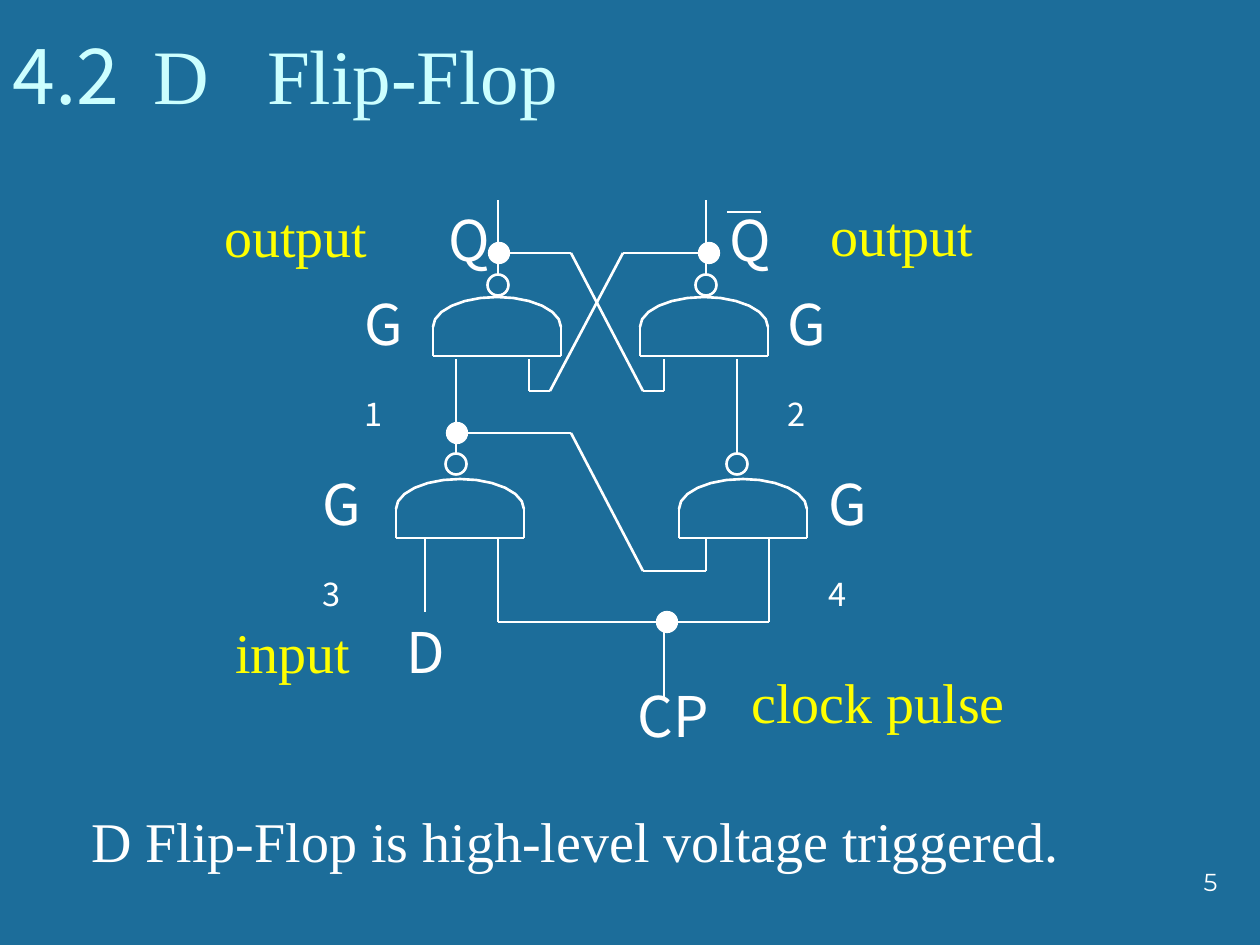
from dataclasses import dataclass
from math import cos, pi, sin

from lxml.etree import SubElement
from pptx import Presentation
from pptx.dml.color import RGBColor
from pptx.enum.shapes import MSO_CONNECTOR, MSO_SHAPE
from pptx.enum.text import MSO_ANCHOR, PP_ALIGN
from pptx.oxml.ns import qn
from pptx.util import Emu, Pt

EMU_PER_PX = 914400 / 126


@dataclass(frozen=True)
class Theme:
    background: RGBColor = RGBColor(0x1C, 0x6D, 0x9A)
    ink: RGBColor = RGBColor(0xFF, 0xFF, 0xFF)
    heading: RGBColor = RGBColor(0xCC, 0xFF, 0xFF)
    accent: RGBColor = RGBColor(0xFF, 0xFF, 0x00)
    sans: str = "Noto Sans CJK SC"
    serif: str = "Times New Roman"
    number_font: str = "Montserrat"
    heading_size: int = 44
    body_size: int = 32
    number_size: int = 14
    wire_width: float = 1.5
    dot_width: float = 0.75


THEME = Theme()
GATE_WIDTH, GATE_SHOULDER, GATE_HEIGHT = 128, 30, 59
NODE_SIZE = 21

GATES = [(640, 297), (433, 297), (679, 479), (396, 479)]
BUBBLES = [(498, 285), (706, 285), (456, 464), (737, 464)]
JUNCTIONS = [(457, 433), (499, 253), (709, 253), (667, 622)]
WIRES = [
    [(498, 275), (498, 200)],
    [(706, 275), (706, 200)],
    [(498, 253), (571, 253), (643, 391), (664, 391), (664, 359)],
    [(706, 253), (623, 253), (550, 391), (529, 391), (529, 359)],
    [(456, 359), (456, 391)],
    [(456, 454), (456, 380)],
    [(737, 359), (737, 391)],
    [(737, 454), (737, 380)],
    [(456, 433), (571, 433), (643, 571), (706, 571), (706, 538)],
    [(498, 538), (498, 622), (769, 622), (769, 538)],
    [(664, 622), (664, 697)],
    [(425, 538), (425, 612)],
    [(727, 212), (761, 212)],
]
SIGNALS = [
    ("Q", 717, 199, 53),
    ("Q", 436, 199, 53),
    ("D", 394, 611, 53),
    ("CP", 625, 675, 115),
]
GATE_NAMES = [("1", 352, 283), ("2", 775, 283), ("3", 310, 463), ("4", 816, 463)]
ROLES = [
    ("input", 223, 611, 141),
    ("output", 212, 195, 170),
    ("output", 818, 194, 170),
    ("clock pulse", 739, 661, 282),
]


def px(length):
    return Emu(round(length * EMU_PER_PX))


def add_run(paragraph, wording, font, size, color, baseline=None):
    run = paragraph.add_run()
    run.text = wording
    run.font.name = font
    run.font.size = Pt(size)
    run.font.color.rgb = color
    if baseline is not None:
        run._r.get_or_add_rPr().set("baseline", str(baseline))


def add_text(slide, left, top, width, height, anchor=MSO_ANCHOR.TOP):
    frame = slide.shapes.add_textbox(px(left), px(top), px(width), px(height)).text_frame
    frame.word_wrap = True
    frame.vertical_anchor = anchor
    return frame.paragraphs[0]


def add_wire(slide, corners):
    for start, end in zip(corners, corners[1:]):
        wire = slide.shapes.add_connector(
            MSO_CONNECTOR.STRAIGHT, *map(px, (*start, *end))
        )
        wire.line.color.rgb = THEME.ink
        wire.line.width = Pt(THEME.wire_width)
        SubElement(wire._element.spPr, qn("a:effectLst"))


def style_outline(shape, width, filled=False):
    shape.shadow.inherit = False
    shape.line.color.rgb = THEME.ink
    shape.line.width = Pt(width)
    if filled:
        shape.fill.solid()
        shape.fill.fore_color.rgb = THEME.ink
    else:
        shape.fill.background()


def add_node(slide, center, width, filled=False):
    left, top = (value - NODE_SIZE / 2 for value in center)
    node = slide.shapes.add_shape(
        MSO_SHAPE.OVAL, px(left), px(top), px(NODE_SIZE), px(NODE_SIZE)
    )
    style_outline(node, width, filled)


def add_gate(slide, left, top, steps=12):
    radius = GATE_WIDTH / 2
    shoulder = top + GATE_SHOULDER
    right, bottom = left + GATE_WIDTH, top + GATE_HEIGHT
    curve = [
        (
            px(left + radius - radius * cos(pi * step / steps)),
            px(shoulder - GATE_SHOULDER * sin(pi * step / steps)),
        )
        for step in range(steps + 1)
    ]
    builder = slide.shapes.build_freeform(*curve[0])
    builder.add_line_segments(curve[1:], close=False)
    style_outline(builder.convert_to_shape(), THEME.wire_width)
    add_wire(slide, [(left, shoulder), (left, bottom), (right, bottom), (right, shoulder)])


def add_circuit(slide):
    for corners in WIRES:
        add_wire(slide, corners)
    for center in BUBBLES:
        add_node(slide, center, THEME.wire_width)
    for center in JUNCTIONS:
        add_node(slide, center, THEME.dot_width, filled=True)
    for left, top in GATES:
        add_gate(slide, left, top)


def add_labels(slide):
    for signal, left, top, width in SIGNALS:
        label = add_text(slide, left, top, width, 80)
        add_run(label, signal, THEME.sans, THEME.body_size, THEME.ink)
    for number, left, top in GATE_NAMES:
        label = add_text(slide, left, top, 72, 80)
        add_run(label, "G", THEME.sans, THEME.body_size, THEME.ink)
        add_run(label, number, THEME.sans, THEME.body_size, THEME.ink, -25000)
    for role, left, top, width in ROLES:
        label = add_text(slide, left, top, width, 80)
        add_run(label, role, THEME.serif, THEME.body_size, THEME.accent)


def main():
    deck = Presentation()
    deck.slide_width, deck.slide_height = px(1260), px(945)
    slide = deck.slides.add_slide(deck.slide_layouts[6])
    slide.background.fill.solid()
    slide.background.fill.fore_color.rgb = THEME.background

    heading = add_text(slide, 0, 20, 1207, 106, anchor=MSO_ANCHOR.BOTTOM)
    add_run(heading, "4.2  ", THEME.sans, THEME.heading_size, THEME.heading)
    add_run(heading, "D   Flip-Flop", THEME.serif, THEME.heading_size, THEME.heading)

    add_circuit(slide)
    add_labels(slide)

    summary = add_text(slide, 79, 800, 1057, 81)
    add_run(summary, "D Flip-Flop is high-level voltage triggered.",
            THEME.serif, THEME.body_size, THEME.ink)

    page_number = add_text(slide, 968, 861, 262, 63)
    page_number.alignment = PP_ALIGN.RIGHT
    add_run(page_number, "5", THEME.number_font, THEME.number_size, THEME.ink)

    deck.save("out.pptx")


if __name__ == "__main__":
    main()
